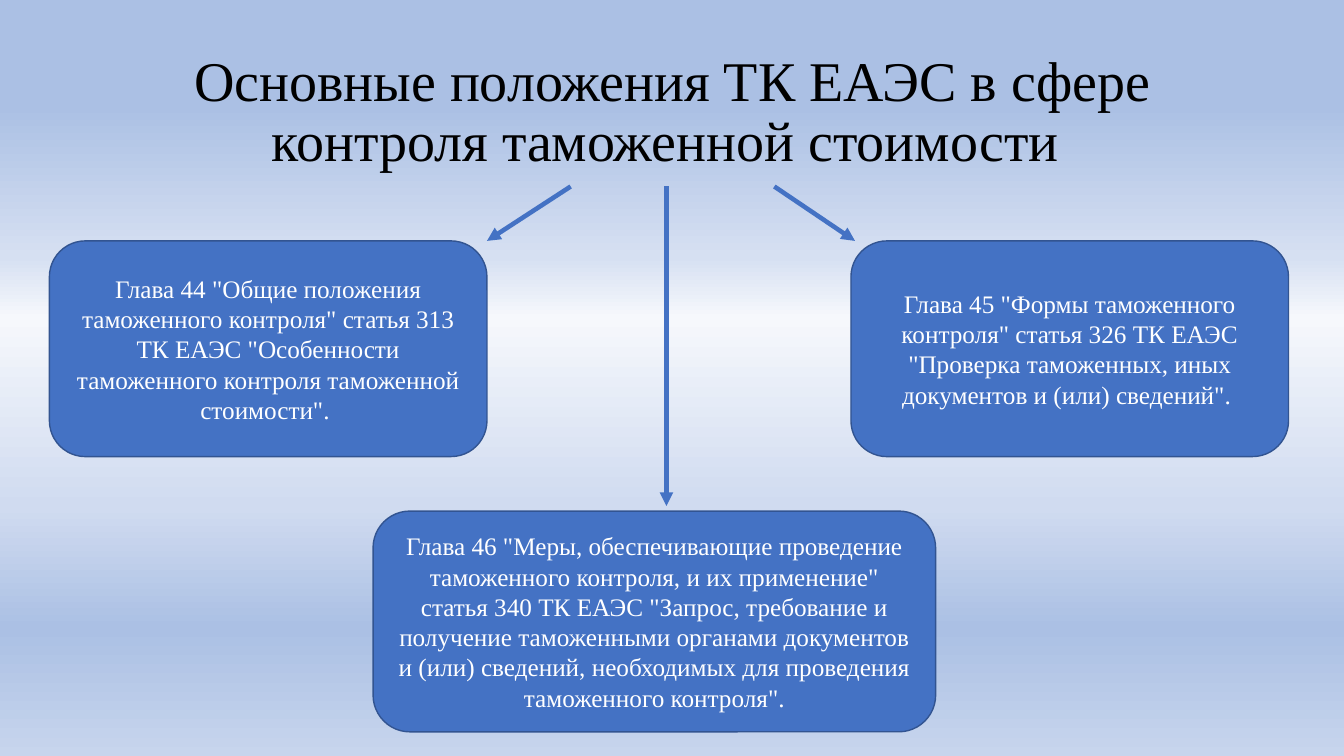
from dataclasses import dataclass

from lxml.etree import SubElement
from pptx import Presentation
from pptx.dml.color import RGBColor
from pptx.enum.shapes import MSO_CONNECTOR as Connector, MSO_SHAPE as Preset
from pptx.enum.text import MSO_ANCHOR as Anchor, MSO_AUTO_SIZE as AutoSize, PP_ALIGN as Align
from pptx.oxml.ns import qn
from pptx.util import Inches, Pt


@dataclass(frozen=True)
class Theme:
    font: str = "Times New Roman"
    title_size: int = 40
    box_size: int = 18
    title_color: str = "000000"
    box_text: str = "FFFFFF"
    accent: str = "4472C4"
    outline: str = "325491"
    outline_width: float = 1
    arrow_width: float = 3.25
    background: tuple = (
        (14, "ABC0E4"), (34, "D6E0F2"), (42, "F6F8FC"),
        (67, "D0DBF0"), (83, "ABC0E4"), (100, "C7D5ED"),
    )


def rgb(value):
    return RGBColor.from_string(value)


def write_text(frame, text, *, size, color, font, line_spacing=None):
    """Fill a text frame with one centred paragraph."""
    frame.word_wrap = True
    frame.auto_size = AutoSize.NONE
    frame.vertical_anchor = Anchor.MIDDLE
    paragraph = frame.paragraphs[0]
    paragraph.alignment = Align.CENTER
    if line_spacing:
        paragraph.line_spacing = line_spacing
    run = paragraph.add_run()
    run.text = text
    run.font.name = font
    run.font.size = Pt(size)
    run.font.color.rgb = rgb(color)


class SlideBuilder:
    def __init__(self, slide, theme):
        self.slide = slide
        self.theme = theme

    def background(self):
        fill = self.slide.background.fill
        fill.gradient()
        fill.gradient_angle = 270
        stops = self.slide.element.find(".//" + qn("a:gsLst"))
        for stop in list(stops):
            stops.remove(stop)
        for percent, color in self.theme.background:
            stop = SubElement(stops, qn("a:gs"), pos=str(percent * 1000))
            SubElement(stop, qn("a:srgbClr"), val=color)

    def title(self, text, left, top, width, height):
        title = self.slide.shapes.title
        title.left, title.top = Inches(left), Inches(top)
        title.width, title.height = Inches(width), Inches(height)
        write_text(title.text_frame, text, size=self.theme.title_size,
                   color=self.theme.title_color, font=self.theme.font, line_spacing=0.9)

    def box(self, text, left, top, width, height):
        shape = self.slide.shapes.add_shape(
            Preset.ROUNDED_RECTANGLE, Inches(left), Inches(top), Inches(width), Inches(height))
        shape.shadow.inherit = False
        shape.fill.solid()
        shape.fill.fore_color.rgb = rgb(self.theme.accent)
        shape.line.color.rgb = rgb(self.theme.outline)
        shape.line.width = Pt(self.theme.outline_width)
        write_text(shape.text_frame, text, size=self.theme.box_size,
                   color=self.theme.box_text, font=self.theme.font)

    def arrow(self, start, end):
        points = [Inches(value) for value in (*start, *end)]
        connector = self.slide.shapes.add_connector(Connector.STRAIGHT, *points)
        connector.line.color.rgb = rgb(self.theme.accent)
        connector.line.width = Pt(self.theme.arrow_width)
        properties = connector.element.spPr
        SubElement(properties.find(qn("a:ln")), qn("a:tailEnd"), type="triangle")
        SubElement(properties, qn("a:effectLst"))


def main():
    presentation = Presentation()
    presentation.slide_width = Inches(13.33)
    presentation.slide_height = Inches(7.5)
    title_only = presentation.slide_layouts[5]
    builder = SlideBuilder(presentation.slides.add_slide(title_only), Theme())

    title_bottom, row_top = 1.85, 2.39
    box_width, box_height = 4.34, 2.14

    builder.background()
    builder.title("Основные положения ТК ЕАЭС в сфере контроля таможенной стоимости ",
                  0.92, 0.4, 11.5, title_bottom - 0.4)

    chapters = (
        ('Глава 44 "Общие положения таможенного контроля" статья 313 ТК ЕАЭС '
         '"Особенности таможенного контроля таможенной стоимости". ',
         0.49, row_top, box_width, box_height),
        ('Глава 45 "Формы таможенного контроля" статья 326 ТК ЕАЭС '
         '"Проверка таможенных, иных документов и (или) сведений". ',
         8.44, row_top, box_width, box_height),
        ('Глава 46 "Меры, обеспечивающие проведение таможенного контроля, и их применение" '
         'статья 340 ТК ЕАЭС "Запрос, требование и получение таможенными органами документов '
         'и (или) сведений, необходимых для проведения таможенного контроля".',
         3.7, 5.07, 5.58, 2.19),
    )
    for chapter in chapters:
        builder.box(*chapter)

    for start_x, end in ((5.66, (4.83, row_top)), (7.68, (8.48, row_top)), (6.61, (6.61, 5.02))):
        builder.arrow((start_x, title_bottom), end)

    presentation.save("out.pptx")


if __name__ == "__main__":
    main()
